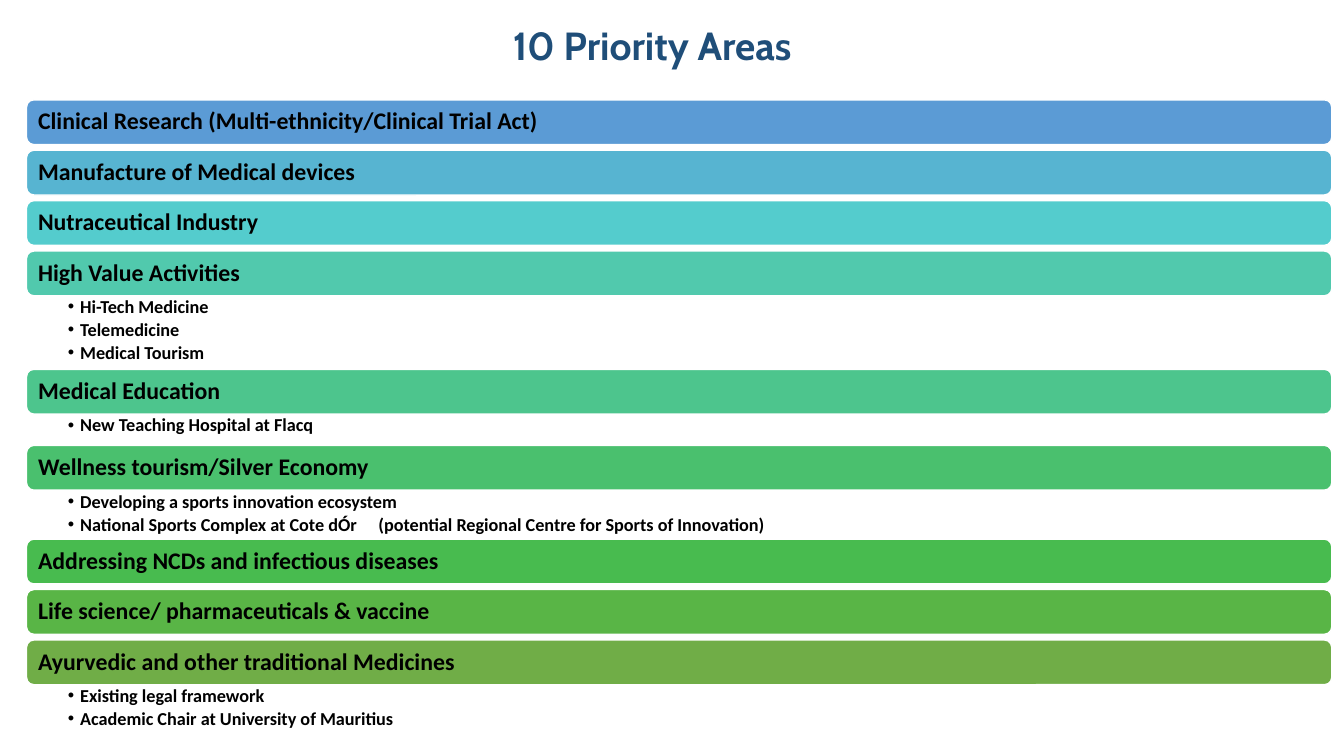
from dataclasses import dataclass

from lxml import etree
from pptx import Presentation
from pptx.dml.color import RGBColor
from pptx.enum.shapes import MSO_SHAPE
from pptx.enum.text import MSO_ANCHOR, MSO_AUTO_SIZE, PP_ALIGN
from pptx.oxml.ns import qn
from pptx.util import Pt

ROUNDED = MSO_SHAPE.ROUNDED_RECTANGLE
TOP, MIDDLE, BOTTOM = MSO_ANCHOR.TOP, MSO_ANCHOR.MIDDLE, MSO_ANCHOR.BOTTOM
LEFT, CENTER = PP_ALIGN.LEFT, PP_ALIGN.CENTER
NO_FIT = MSO_AUTO_SIZE.NONE


@dataclass(frozen=True)
class Theme:
    title_font: str = "Cabin"
    body_font: str = "Calibri"
    title_color: str = "1F4E79"
    text_color: str = "000000"
    bar_line: str = "FFFFFF"
    title_size: int = 28
    bar_size: int = 17
    list_size: int = 13


THEME = Theme()
BAR_LEFT, BAR_WIDTH, BAR_HEIGHT, BAR_GAP = 18.9, 932.4, 32, 4
FIRST_BAR_TOP = 71.3
LIST_HEIGHTS = {1: 22.3, 2: 35, 3: 52.5}
BULLET_INDENT = 8.8
NOTE_TAB = 221.8

AREAS = [
    ("Clinical Research (Multi-ethnicity/Clinical Trial Act)", "5B9BD5", []),
    ("Manufacture of Medical devices", "57B4D1", []),
    ("Nutraceutical Industry", "54CCCD", []),
    ("High Value Activities", "51C9AD",
     ["Hi-Tech Medicine", "Telemedicine", "Medical Tourism"]),
    ("Medical Education", "4DC58D", ["New Teaching Hospital at Flacq"]),
    ("Wellness tourism/Silver Economy", "4AC06E",
     ["Developing a sports innovation ecosystem",
      "National Sports Complex at Cote dÓr\t(potential Regional Centre for Sports of Innovation)"]),
    ("Addressing NCDs and infectious diseases", "48BB4F", []),
    ("Life science/ pharmaceuticals & vaccine", "59B546", []),
    ("Ayurvedic and other traditional Medicines", "70AD47",
     ["Existing legal framework", "Academic Chair at University of Mauritius"]),
]


def write_text(shape, lines, size, font=THEME.body_font, color=THEME.text_color,
               align=LEFT, anchor=MIDDLE, insets=(6.7, 0, 6.7, 0), space_after=0):
    frame = shape.text_frame
    frame.word_wrap = True
    frame.auto_size = NO_FIT
    frame.vertical_anchor = anchor
    frame.margin_left, frame.margin_top, frame.margin_right, frame.margin_bottom = map(Pt, insets)
    for index, line in enumerate(lines):
        paragraph = frame.add_paragraph() if index else frame.paragraphs[0]
        paragraph.alignment = align
        paragraph.line_spacing = 0.9
        paragraph.space_after = Pt(space_after)
        run = paragraph.add_run()
        run.text = line
        run.font.name = font
        run.font.size = Pt(size)
        run.font.bold = True
        run.font.color.rgb = RGBColor.from_string(color)
    return frame.paragraphs


def add_bullet(paragraph):
    properties = paragraph._p.get_or_add_pPr()
    properties.set("marL", str(Pt(BULLET_INDENT)))
    properties.set("indent", str(-Pt(BULLET_INDENT)))
    etree.SubElement(properties, qn("a:buFont"), typeface="Arial")
    etree.SubElement(properties, qn("a:buChar"), char="•")
    if "\t" in paragraph.text:
        tabs = etree.SubElement(properties, qn("a:tabLst"))
        etree.SubElement(tabs, qn("a:tab"), pos=str(Pt(NOTE_TAB)), algn="l")


presentation = Presentation()
presentation.slide_width, presentation.slide_height = Pt(960), Pt(540)
slide = presentation.slides.add_slide(presentation.slide_layouts[5])

title = slide.shapes.title
title.left, title.top, title.width, title.height = Pt(51.8), Pt(1.4), Pt(828), Pt(51.8)
write_text(title, ["10 Priority Areas"], THEME.title_size, font=THEME.title_font,
           color=THEME.title_color, align=CENTER, anchor=BOTTOM, insets=(7.2, 3.6, 7.2, 3.6))

top = FIRST_BAR_TOP
for heading, color, items in AREAS:
    bar = slide.shapes.add_shape(ROUNDED, Pt(BAR_LEFT), Pt(top), Pt(BAR_WIDTH), Pt(BAR_HEIGHT))
    bar.shadow.inherit = False
    bar.fill.solid()
    bar.fill.fore_color.rgb = RGBColor.from_string(color)
    bar.line.color.rgb = RGBColor.from_string(THEME.bar_line)
    bar.line.width = Pt(1)
    write_text(bar, [heading], THEME.bar_size)
    top += BAR_HEIGHT

    if items:
        height = LIST_HEIGHTS[len(items)]
        item_list = slide.shapes.add_textbox(Pt(BAR_LEFT), Pt(top), Pt(BAR_WIDTH), Pt(height))
        for paragraph in write_text(item_list, items, THEME.list_size, anchor=TOP,
                                    insets=(29.6, 1.5, 9.2, 1.5), space_after=2.4):
            add_bullet(paragraph)
        top += height
    else:
        top += BAR_GAP

presentation.save("out.pptx")
